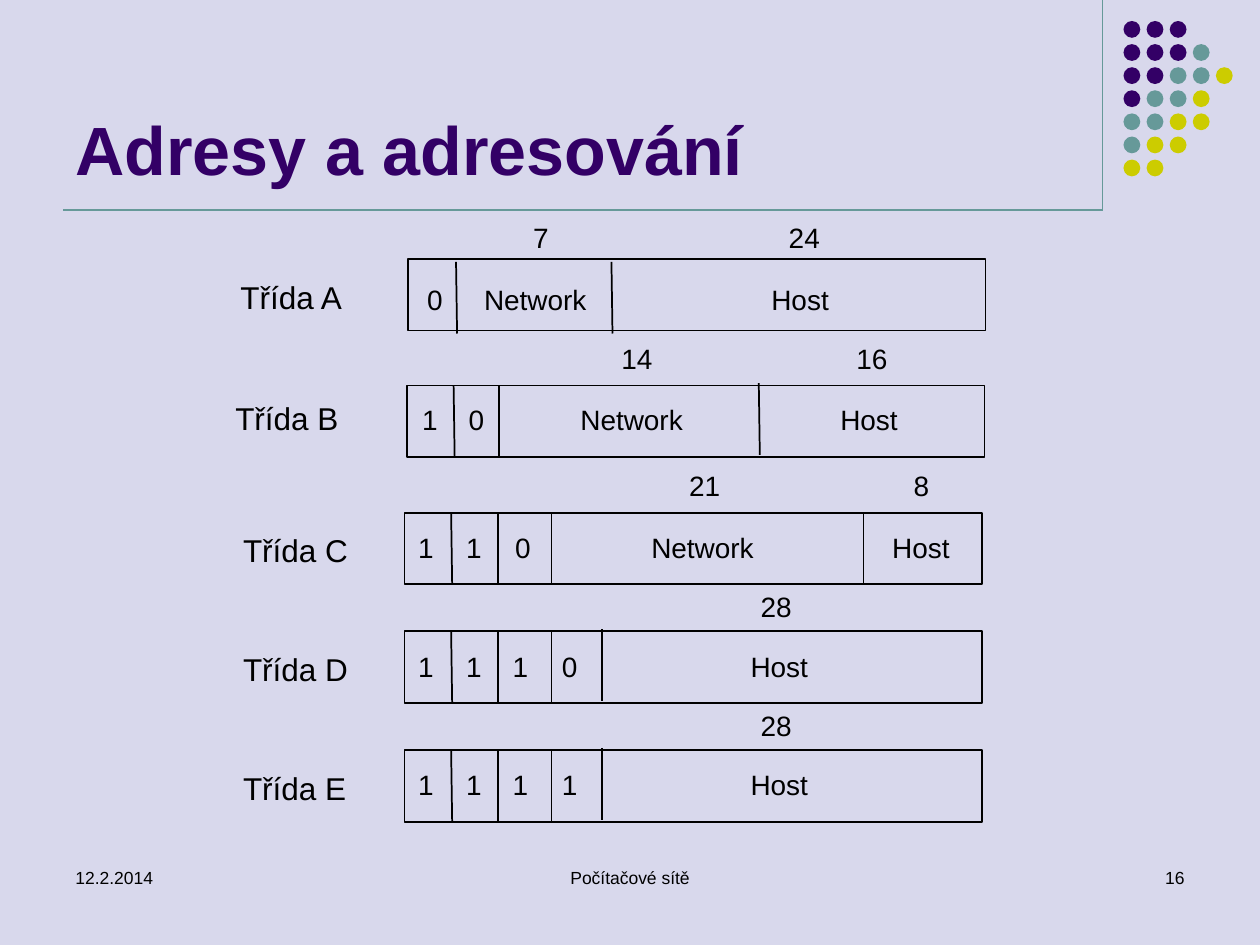
from dataclasses import dataclass

from lxml.etree import SubElement
from pptx import Presentation
from pptx.dml.color import RGBColor
from pptx.enum.shapes import MSO_CONNECTOR, MSO_SHAPE
from pptx.enum.text import MSO_ANCHOR, MSO_AUTO_SIZE, PP_ALIGN
from pptx.oxml.ns import qn
from pptx.util import Pt


@dataclass(frozen=True)
class Theme:
    font: str = "Arial"
    background: str = "D8D8EC"
    ink: str = "000000"
    purple: str = "330066"
    teal: str = "669999"
    yellow: str = "CCCC00"
    title_size: float = 39
    label_size: float = 18
    field_size: float = 16
    footer_size: float = 10
    rule_width: float = 0.75
    box_width: float = 1


@dataclass(frozen=True)
class AddressClass:
    name: str
    name_left: float
    name_drop: float
    left: float
    top: float
    field_drop: float
    count_rise: float
    dividers: tuple
    fields: tuple
    counts: tuple


BOX_WIDTH, BOX_HEIGHT = 330, 41
LABEL_WIDTH, LABEL_HEIGHT = 78, 28.8
FIELD_HEIGHT = 19.2
DIGIT_WIDTH = 9.2
WORD_WIDTHS = {"Network": 61, "Host": 34}

DOT_ROWS = ("PPP", "PPPT", "PPTTY", "PTTY", "TTYY", "TYY", "YY")
DOT_LEFT, DOT_TOP, DOT_PITCH, DOT_SIZE = 642, 12, 13.2, 9.6

LONG_DIVIDERS = ((257.8, 0.6, 0), (284.4, 0, 0), (315.2, 0, 0.4), (344, 0, 1.2))


def long_class(name, top, last_bit):
    bits = (("1", 239), ("1", 266.4), ("1", 293), (last_bit, 321.1))
    return AddressClass(name, 131.8, 7.2, 231.2, top, 10.2, 24, LONG_DIVIDERS,
                        bits + (("Host", 428.9),), (("28", 434.7),))


CLASSES = (
    AddressClass("Třída A", 130.3, 7.2, 233.2, 148, 13.4, 22,
                 ((260.6, 0.6, -1.6), (349.4, 0.6, -1.6)),
                 (("0", 244.1), ("Network", 276.6), ("Host", 440.8)),
                 (("7", 304.6), ("24", 450.7))),
    AddressClass("Třída B", 127.4, 4.3, 232.6, 220.3, 10, 25.2,
                 ((259.2, 0.6, 0), (285.1, 0, 0), (433.6, 0.6, 1.4)),
                 (("1", 241.2), ("0", 267.8), ("Network", 331.7), ("Host", 480.2)),
                 (("14", 355), ("16", 489.4))),
    AddressClass("Třída C", 131.8, 7.2, 231.2, 293, 10, 25.2,
                 LONG_DIVIDERS[:3] + ((493.4, 0, 0),),
                 (("1", 239), ("1", 266.4), ("0", 294.3), ("Network", 372.2),
                  ("Host", 509.8)),
                 (("21", 393.8), ("8", 522))),
    long_class("Třída D", 360.8, "0"),
    long_class("Třída E", 428.6, "1"),
)


class SlideBuilder:
    def __init__(self, slide, theme):
        self.slide = slide
        self.theme = theme
        fill = slide.background.fill
        fill.solid()
        fill.fore_color.rgb = RGBColor.from_string(theme.background)

    def text(self, content, left, top, width, height, size, color=None,
             bold=False, align=PP_ALIGN.LEFT, anchor=MSO_ANCHOR.TOP,
             wrap=True, inset=True):
        shape = self.slide.shapes.add_textbox(Pt(left), Pt(top), Pt(width), Pt(height))
        frame = shape.text_frame
        frame.word_wrap = wrap
        frame.auto_size = MSO_AUTO_SIZE.NONE if wrap else MSO_AUTO_SIZE.SHAPE_TO_FIT_TEXT
        frame.vertical_anchor = anchor
        if not inset:
            frame.margin_left = frame.margin_right = 0
            frame.margin_top = frame.margin_bottom = 0
        paragraph = frame.paragraphs[0]
        paragraph.text = content
        paragraph.alignment = align
        paragraph.font.name = self.theme.font
        paragraph.font.size = Pt(size)
        paragraph.font.bold = bold
        paragraph.font.color.rgb = RGBColor.from_string(color or self.theme.ink)

    def field(self, content, left, top):
        width = WORD_WIDTHS.get(content, DIGIT_WIDTH * len(content))
        self.text(content, left, top, width, FIELD_HEIGHT, self.theme.field_size,
                  wrap=False, inset=False)

    def line(self, start, end, color, width):
        connector = self.slide.shapes.add_connector(
            MSO_CONNECTOR.STRAIGHT, *(Pt(value) for value in start + end))
        connector.line.color.rgb = RGBColor.from_string(color)
        connector.line.width = Pt(width)
        SubElement(connector.element.spPr, qn("a:effectLst"))

    def dot(self, left, top, color):
        shape = self.slide.shapes.add_shape(
            MSO_SHAPE.OVAL, Pt(left), Pt(top), Pt(DOT_SIZE), Pt(DOT_SIZE))
        shape.shadow.inherit = False
        shape.fill.solid()
        shape.fill.fore_color.rgb = RGBColor.from_string(color)
        shape.line.fill.background()

    def box(self, left, top):
        shape = self.slide.shapes.add_shape(
            MSO_SHAPE.RECTANGLE, Pt(left), Pt(top), Pt(BOX_WIDTH), Pt(BOX_HEIGHT))
        shape.shadow.inherit = False
        shape.fill.background()
        shape.line.color.rgb = RGBColor.from_string(self.theme.ink)
        shape.line.width = Pt(self.theme.box_width)

    def dot_pattern(self):
        colors = {"P": self.theme.purple, "T": self.theme.teal, "Y": self.theme.yellow}
        for row, keys in enumerate(DOT_ROWS):
            for column, key in enumerate(keys):
                self.dot(DOT_LEFT + column * DOT_PITCH, DOT_TOP + row * DOT_PITCH,
                         colors[key])

    def address_class(self, item):
        self.text(item.name, item.name_left, item.top + item.name_drop,
                  LABEL_WIDTH, LABEL_HEIGHT, self.theme.label_size, wrap=False)
        self.box(item.left, item.top)
        for left, slant, rise in item.dividers:
            top = item.top - rise
            self.line((left, top), (left + slant, top + BOX_HEIGHT),
                      self.theme.ink, self.theme.box_width)
        for content, left in item.fields:
            self.field(content, left, item.top + item.field_drop)
        for content, left in item.counts:
            self.field(content, left, item.top - item.count_rise)


def main():
    theme = Theme()
    presentation = Presentation()
    presentation.slide_width, presentation.slide_height = Pt(720), Pt(540)
    slide = presentation.slides.add_slide(presentation.slide_layouts[6])
    builder = SlideBuilder(slide, theme)

    builder.line((630, 0), (630, 120), theme.teal, theme.rule_width)
    builder.line((36, 120), (630, 120), theme.teal, theme.rule_width)
    builder.dot_pattern()
    builder.text("Adresy a adresování", 36, 9.4, 594, 102, theme.title_size,
                 theme.purple, bold=True, anchor=MSO_ANCHOR.BOTTOM)
    for item in CLASSES:
        builder.address_class(item)
    for content, left, width, align in (
        ("12.2.2014", 36, 168, PP_ALIGN.LEFT),
        ("Počítačové sítě", 246, 228, PP_ALIGN.CENTER),
        ("16", 516, 168, PP_ALIGN.RIGHT),
    ):
        builder.text(content, left, 492, width, 36, theme.footer_size, align=align)

    presentation.save("out.pptx")


if __name__ == "__main__":
    main()
